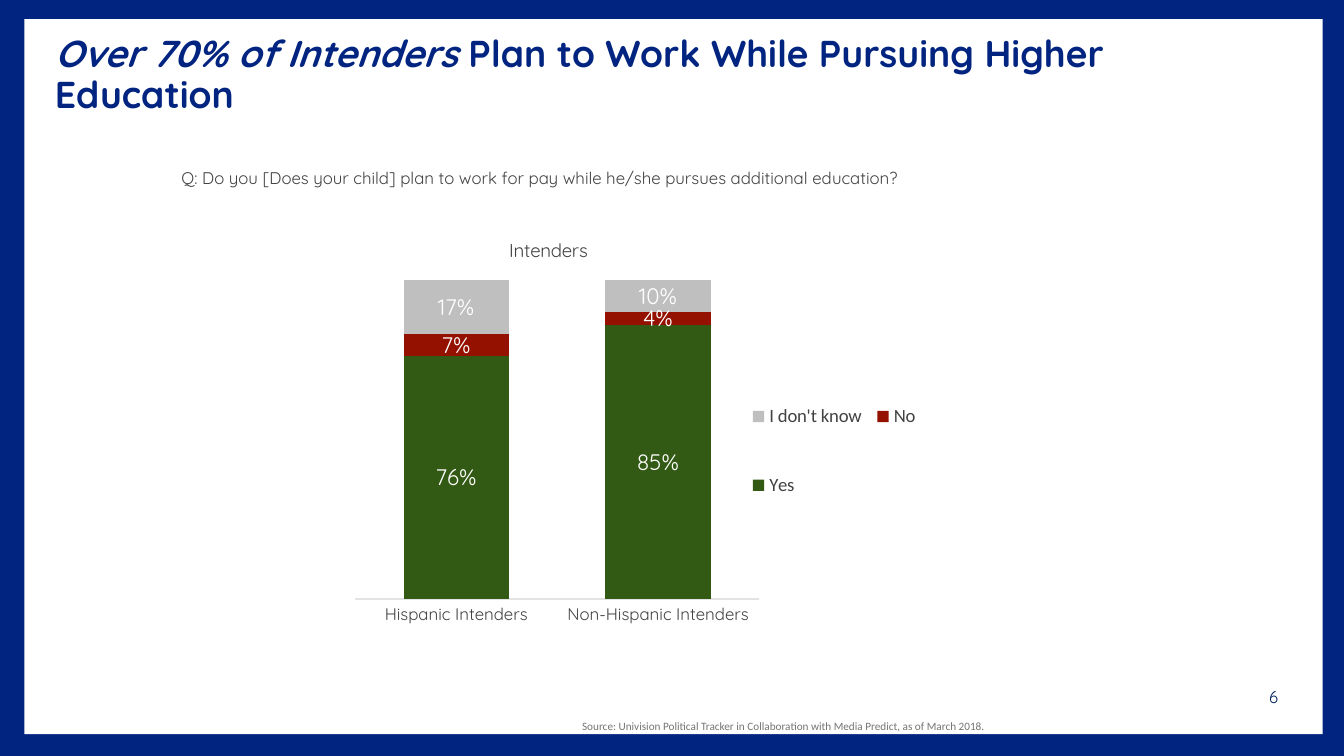
from pptx import Presentation
from pptx.chart.data import CategoryChartData
from pptx.dml.color import RGBColor
from pptx.enum.chart import XL_CHART_TYPE, XL_LABEL_POSITION, XL_LEGEND_POSITION, XL_TICK_MARK
from pptx.enum.shapes import MSO_SHAPE
from pptx.enum.text import MSO_ANCHOR, PP_ALIGN
from pptx.oxml import parse_xml
from pptx.oxml.ns import nsdecls, qn
from pptx.util import Cm, Pt

NAVY = RGBColor(0x01, 0x24, 0x80)
INK = RGBColor(0x00, 0x20, 0x60)
WHITE = RGBColor(0xFF, 0xFF, 0xFF)
DARK = RGBColor(0x42, 0x42, 0x42)
GREY = RGBColor(0x74, 0x74, 0x74)
RULE = RGBColor(0xE3, 0xE3, 0xE3)
GREEN = RGBColor(0x33, 0x5A, 0x14)
RED = RGBColor(0x94, 0x11, 0x00)
SILVER = RGBColor(0xBF, 0xBF, 0xBF)
HEAD = "Quicksand"
BODY = "Calibri"
RECT = MSO_SHAPE.RECTANGLE
STACK = XL_CHART_TYPE.COLUMN_STACKED_100
MID = XL_LABEL_POSITION.CENTER
SIDE = XL_LEGEND_POSITION.RIGHT
NONE = XL_TICK_MARK.NONE
TOP, MIDDLE = MSO_ANCHOR.TOP, MSO_ANCHOR.MIDDLE
LEFT, CENTER, RIGHT = PP_ALIGN.LEFT, PP_ALIGN.CENTER, PP_ALIGN.RIGHT


def style(font, name, size, color, bold=False):
    font.name = name
    font.size = Pt(size)
    font.color.rgb = color
    font.bold = bold


def place(node, index, **spots):
    old = node.find(qn("c:layout"))
    if old is not None:
        node.remove(old)
    modes = "".join(f'<c:{k}Mode val="edge"/>' for k in "xy")
    sizes = "".join(f'<c:{k} val="{v}"/>' for k, v in spots.items())
    inner = '<c:layoutTarget val="inner"/>' if index == 0 else ""
    node.insert(index, parse_xml(
        f'<c:layout {nsdecls("c")}><c:manualLayout>{inner}{modes}{sizes}'
        '</c:manualLayout></c:layout>'))


deck = Presentation()
deck.slide_width = Cm(25.4)
deck.slide_height = Cm(14.28)
slide = deck.slides.add_slide(deck.slide_layouts[6])

frames = [
    (0, 0, 25.4, 14.28, NAVY),
    (0.46, 0.36, 24.54, 13.51, WHITE),
]
for *box, color in frames:
    shape = slide.shapes.add_shape(RECT, *map(Cm, box))
    shape.shadow.inherit = False
    shape.fill.solid()
    shape.fill.fore_color.rgb = color
    shape.line.fill.background()

data = CategoryChartData(number_format="0%")
data.categories = ["Hispanic Intenders", "Non-Hispanic Intenders"]
data.add_series("Yes", (0.76, 0.85))
data.add_series("No", (0.07, 0.04))
data.add_series("I don't know", (0.17, 0.1))
chart = slide.shapes.add_chart(STACK, Cm(4.62), Cm(4.06), Cm(14.96), Cm(8.74), data).chart
style(chart.font, BODY, 10, DARK)

title = chart.chart_title
title.text_frame.text = "Intenders"
style(title.text_frame.paragraphs[0].font, HEAD, 10, DARK)
place(title._element, 1, x=0.33, y=0.04)

chart.has_legend = True
legend = chart.legend
legend.position = SIDE
legend.include_in_layout = False
style(legend.font, BODY, 10, DARK)
place(legend._element, 1, x=0.63, y=0.31, w=0.23, h=0.4)

axis = chart.category_axis
axis.major_tick_mark = NONE
axis.format.line.color.rgb = RULE
axis.format.line.width = Pt(0.75)
style(axis.tick_labels.font, HEAD, 9, DARK)
value = chart.value_axis
value.visible = False
value.has_major_gridlines = False
value.maximum_scale = 1

plot = chart.plots[0]
plot.vary_by_categories = False
plot.gap_width = 92
plot.overlap = 100
for series, color in zip(plot.series, (GREEN, RED, SILVER)):
    series.format.fill.solid()
    series.format.fill.fore_color.rgb = color
    labels = series.data_labels
    labels.show_value = True
    labels.position = MID
    labels.number_format = "0%"
    labels.number_format_is_linked = False
    style(labels.font, HEAD, 12, WHITE)
place(chart._chartSpace.chart.plotArea, 0, x=0.14, y=0.14, w=0.51, h=0.69)

texts = [
    (3.18, 3.05, 19.05, 0.64, TOP, LEFT, HEAD, 9, DARK, False,
     ["Q: Do you [Does your child] plan to work for pay while he/she pursues additional education?"]),
    (23.6, 12.78, 0.94, 0.76, MIDDLE, CENTER, HEAD, 9, INK, False, ["6"]),
    (0.79, 13.46, 18.06, 0.51, TOP, RIGHT, BODY, 6, GREY, False,
     ["Source: Univision Political Tracker in Collaboration with Media Predict, as of March 2018."]),
    (0.79, 0.71, 23.65, 1.45, MIDDLE, LEFT, HEAD, 20, NAVY, True,
     ["Over 70% of Intenders", " Plan to Work While Pursuing Higher Education"]),
]
for *box, anchor, align, name, size, color, bold, runs in texts:
    frame = slide.shapes.add_textbox(*map(Cm, box)).text_frame
    frame.word_wrap = True
    frame.vertical_anchor = anchor
    para = frame.paragraphs[0]
    para.alignment = align
    style(para.font, name, size, color, bold)
    for words in runs:
        para.add_run().text = words
para.line_spacing = 0.9
para.runs[0].font.italic = True

deck.save("out.pptx")
